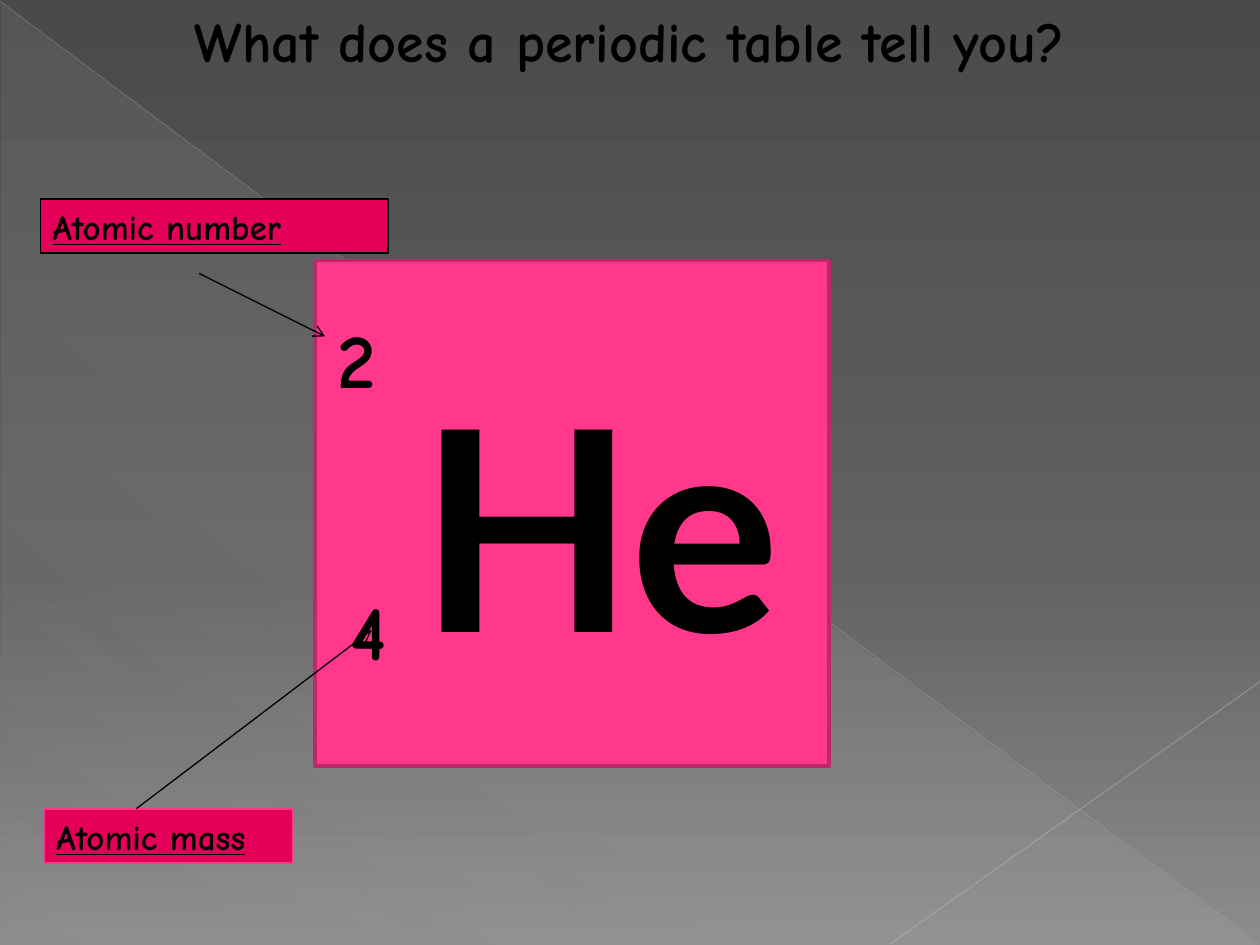
from lxml import etree
from pptx import Presentation
from pptx.dml.color import RGBColor
from pptx.enum import shapes, text
from pptx.oxml import parse_xml
from pptx.oxml.ns import nsdecls, qn
from pptx.util import Pt

BLACK = RGBColor(0x00, 0x00, 0x00)
PINK = RGBColor(0xFF, 0x38, 0x8C)
DARK_PINK = RGBColor(0xBD, 0x29, 0x68)
CRIMSON = RGBColor(0xE4, 0x00, 0x59)
PALE_GREY = RGBColor(0xD2, 0xD2, 0xD2)
RULE_GREY = RGBColor(0xBF, 0xBF, 0xBF)
EDGE_GREY = RGBColor(0xC6, 0xC6, 0xC6)
BG_TOP = RGBColor(0x4A, 0x4A, 0x4A)
BG_MID = RGBColor(0x62, 0x62, 0x62)
BG_BOTTOM = RGBColor(0x8C, 0x8C, 0x8C)
HAND, SANS = "Comic Neue", "Lato"


def set_gradient(props, stops, angle):
    """Replace a solid fill by stops of (position, colour, opacity) in percent."""
    gs = "".join(
        f'<a:gs pos="{pos * 1000}"><a:srgbClr val="{color}">'
        f'<a:alpha val="{opacity * 1000}"/></a:srgbClr></a:gs>'
        for pos, color, opacity in stops)
    fill = parse_xml(f'<a:gradFill {nsdecls("a")} rotWithShape="1"><a:gsLst>{gs}</a:gsLst>'
                     f'<a:lin ang="{angle * 60000}" scaled="0"/></a:gradFill>')
    props.replace(props.find(qn("a:solidFill")), fill)


def add_line(start, end, color, width, opacity=100, arrow=False):
    line = s.shapes.add_connector(shapes.MSO_CONNECTOR.STRAIGHT,
                                  *map(Pt, start + end))
    line.line.color.rgb = color
    line.line.width = Pt(width)
    props = line.element.spPr
    etree.SubElement(props, qn("a:effectLst"))
    ln = props.find(qn("a:ln"))
    if opacity < 100:
        rgb = ln.find(".//" + qn("a:srgbClr"))
        etree.SubElement(rgb, qn("a:alpha"), val=str(opacity * 1000))
    if arrow:
        etree.SubElement(ln, qn("a:tailEnd"), type="arrow")


prs = Presentation()
prs.slide_width, prs.slide_height = Pt(720), Pt(540)
s = prs.slides.add_slide(prs.slide_layouts[5])

# Background
s.background.fill.solid()
set_gradient(s.element.find(".//" + qn("p:bgPr")),
             [(0, BG_TOP, 100), (60, BG_MID, 100), (100, BG_BOTTOM, 100)], 90)
triangle = s.shapes.add_shape(shapes.MSO_SHAPE.RIGHT_TRIANGLE,
                              Pt(0.72), Pt(1.44), Pt(718.56), Pt(538.56))
triangle.shadow.inherit = False
triangle.line.fill.background()
triangle.fill.solid()
set_gradient(triangle.element.spPr,
             [(0, PALE_GREY, 10), (70, PALE_GREY, 8), (100, PALE_GREY, 1)], 133)
add_line((0, 0.72), (719.28, 539.28), RULE_GREY, 0.39, opacity=35)
add_line((720, 389.52), (509.04, 539.28), EDGE_GREY, 0.47, opacity=45)

# Title, brought in front of the background
title = s.shapes.title
triangle.element.getparent().append(title.element)
title.left, title.top, title.width, title.height = Pt(0), Pt(0), Pt(720), Pt(46)
tf = title.text_frame
tf.text = "What does a periodic table tell you?"
tf.auto_size = text.MSO_AUTO_SIZE.NONE
tf.vertical_anchor = text.MSO_ANCHOR.TOP
p = tf.paragraphs[0]
p.alignment = text.PP_ALIGN.CENTER
p.font.name, p.font.size, p.font.bold = HAND, Pt(32), True
p.font.color.rgb = BLACK

# Element tile, its symbol and numbers, and the two labels
boxes = [
    # text, (left, top, width, height), font, size, fill, outline, outline width
    ("", (180, 149, 293.76, 288.72), HAND, 20, PINK, DARK_PINK, 2),
    ("He", (232.56, 198, 283.68, 199.44), SANS, 160, None, None, 0),
    ("2", (185.76, 174.24, 38.88, 60.48), HAND, 44, None, None, 0),
    ("4", (192.96, 329.76, 39.6, 59.76), HAND, 44, None, None, 0),
    ("Atomic mass", (25.2, 462.24, 141.84, 30.96), HAND, 20, CRIMSON, PINK, 0.75),
    ("Atomic number", (23.04, 113.76, 198.72, 30.96), HAND, 20, CRIMSON, BLACK, 0.75),
]
for words, place, font, size, fill, outline, width in boxes:
    if fill is None:
        sp = s.shapes.add_textbox(*map(Pt, place))
    else:
        sp = s.shapes.add_shape(shapes.MSO_SHAPE.RECTANGLE, *map(Pt, place))
        sp.shadow.inherit = False
        sp.fill.solid()
        sp.fill.fore_color.rgb = fill
        sp.line.color.rgb = outline
        sp.line.width = Pt(width)
    if words:
        tf = sp.text_frame
        tf.text = words
        tf.word_wrap = True
        tf.vertical_anchor = text.MSO_ANCHOR.TOP
        p = tf.paragraphs[0]
        p.alignment = text.PP_ALIGN.LEFT
        p.font.name, p.font.size, p.font.bold = font, Pt(size), True
        p.font.underline = fill is not None
        p.font.color.rgb = BLACK

# Arrows from the labels to the numbers
add_line((77.76, 462.24), (212.4, 360), BLACK, 0.75, arrow=True)
add_line((113.76, 156.24), (185.76, 192.24), BLACK, 0.75, arrow=True)

prs.save("out.pptx")
